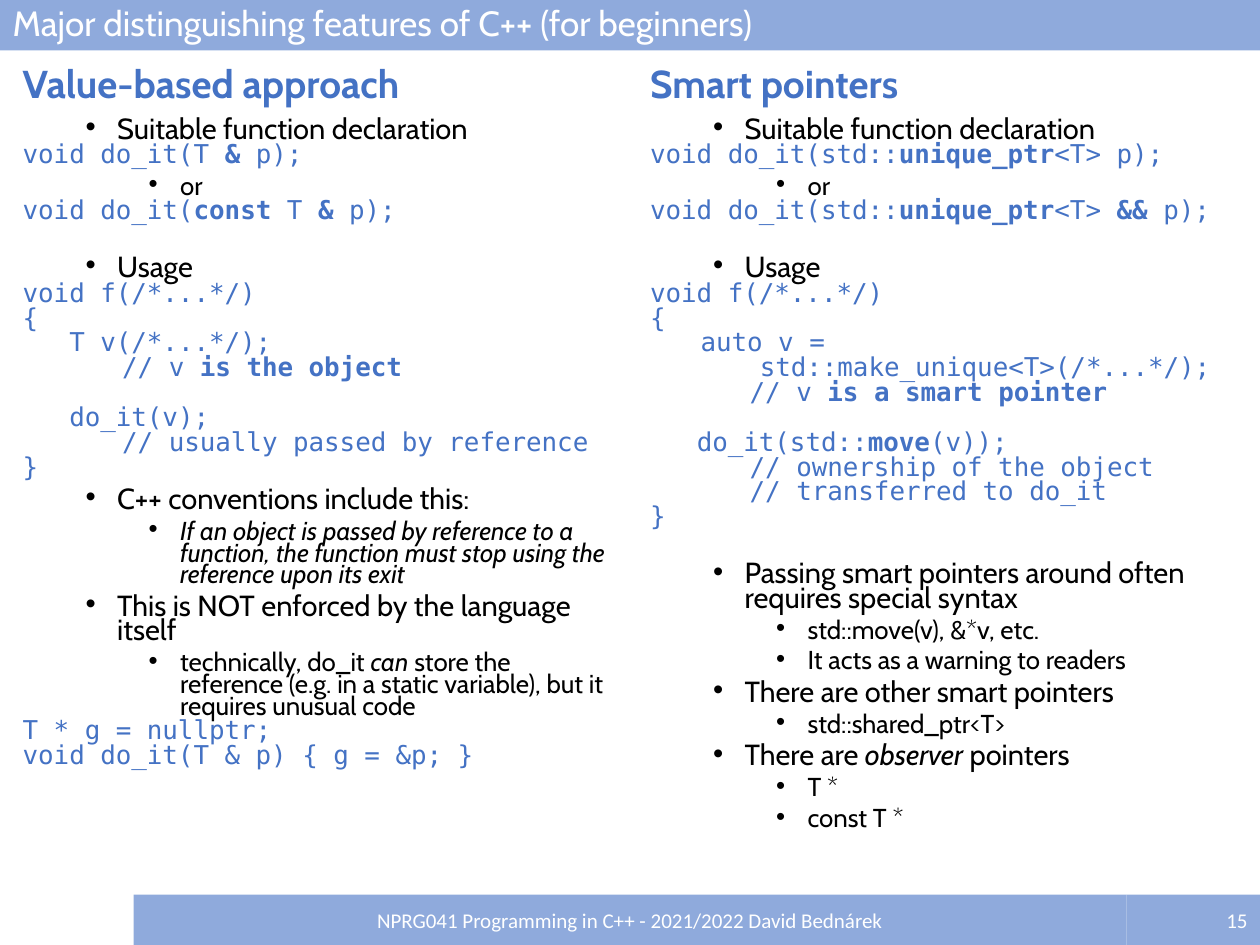
from dataclasses import dataclass

from lxml.etree import SubElement
from pptx import Presentation
from pptx.dml.color import RGBColor
from pptx.enum.shapes import MSO_SHAPE
from pptx.enum.text import MSO_ANCHOR as Anchor, MSO_AUTO_SIZE as AutoSize, PP_ALIGN as Align
from pptx.oxml.ns import qn
from pptx.util import Inches, Pt

COLORS = {"bar": "8FAADC", "accent": "4472C4", "text": "000000", "white": "FFFFFF"}
SANS, MONO, FOOTER = "Cabin", "DejaVu Sans Mono", "Calibri"
BLANK = 14.2  # height of one empty code line, in points


@dataclass
class Style:
    font: str
    size: float
    color: str
    level: int = 0
    indent: float = 0
    spacing: float = 1
    before: float = 0
    bullet: bool = False
    bold: bool = False
    emphasis: str = "bold"


@dataclass
class Line:
    """Pieces of text between bars are emphasised."""
    style: Style
    text: str
    indent: float = 0
    gap: float = 0


@dataclass
class Column:
    left: float
    width: float
    heading: str
    lines: list[Line]


TITLE = Style(SANS, 20, "white", spacing=0.9)
HEADING = Style(SANS, 22.2, "accent", spacing=0.8, before=10, bold=True)
ITEM = Style(SANS, 16.6, "text", 1, 0.75, 0.7, 5, bullet=True, emphasis="italic")
SUBITEM = Style(SANS, 14.8, "text", 2, 1.25, 0.7, 5, bullet=True, emphasis="italic")
CODE = Style(MONO, 14.8, "accent", 4, spacing=0.8)
FOOT = Style(FOOTER, 12, "white")

STEP, COMMENT = 0.37, 0.79  # code indents

VALUES = Column(0.08, 4.84, "Value-based approach", [
    Line(ITEM, "Suitable function declaration"),
    Line(CODE, "void do_it(T |&| p);"),
    Line(SUBITEM, "or"),
    Line(CODE, "void do_it(|const| T |&| p);"),
    Line(ITEM, "Usage", gap=BLANK),
    Line(CODE, "void f(/*...*/)"),
    Line(CODE, "{"),
    Line(CODE, "T v(/*...*/);", STEP),
    Line(CODE, "// v |is the object|", COMMENT),
    Line(CODE, "do_it(v);", STEP, BLANK),
    Line(CODE, "// usually passed by reference", COMMENT),
    Line(CODE, "}"),
    Line(ITEM, "C++ conventions include this:"),
    Line(SUBITEM, "|If an object is passed by reference to a function, "
                  "the function must stop using the reference upon its exit|"),
    Line(ITEM, "This is NOT enforced by the language itself"),
    Line(SUBITEM, "technically, do_it |can| store the reference "
                  "(e.g. in a static variable), but it requires unusual code"),
    Line(CODE, "T * g = nullptr;"),
    Line(CODE, "void do_it(T & p) { g = &p; }"),
])

POINTERS = Column(5.06, 4.86, "Smart pointers", [
    Line(ITEM, "Suitable function declaration"),
    Line(CODE, "void do_it(std::|unique_ptr|<T> p);"),
    Line(SUBITEM, "or"),
    Line(CODE, "void do_it(std::|unique_ptr|<T> |&&| p);"),
    Line(ITEM, "Usage", gap=BLANK),
    Line(CODE, "void f(/*...*/)"),
    Line(CODE, "{"),
    Line(CODE, "auto v =", 0.4),
    Line(CODE, "std::make_unique<T>(/*...*/);", 0.87),
    Line(CODE, "// v |is a smart pointer|", COMMENT),
    Line(CODE, "do_it(std::|move|(v));", STEP, BLANK),
    Line(CODE, "// ownership of the object", COMMENT),
    Line(CODE, "// transferred to do_it", COMMENT),
    Line(CODE, "}"),
    Line(ITEM, "Passing smart pointers around often requires special syntax", gap=BLANK),
    Line(SUBITEM, "std::move(v), &*v, etc."),
    Line(SUBITEM, "It acts as a warning to readers"),
    Line(ITEM, "There are other smart pointers"),
    Line(SUBITEM, "std::shared_ptr<T>"),
    Line(ITEM, "There are |observer| pointers"),
    Line(SUBITEM, "T *"),
    Line(SUBITEM, "const T *"),
])


def rgb(name: str) -> RGBColor:
    return RGBColor.from_string(COLORS[name])


def place(s, left: float, top: float, width: float, height: float) -> None:
    s.left, s.top, s.width, s.height = map(Inches, (left, top, width, height))


def fill_bar(s) -> None:
    s.fill.solid()
    s.fill.fore_color.rgb = rgb("bar")
    s.line.fill.background()


def format_paragraph(p, line: Line, align: Align) -> None:
    style = line.style
    p.level, p.alignment = style.level, align
    p.line_spacing = style.spacing
    p.space_before, p.space_after = Pt(style.before + line.gap), Pt(0)
    pPr = p._p.get_or_add_pPr()
    pPr.set("marL", str(Inches(style.indent + line.indent)))
    pPr.set("indent", str(Inches(-0.25 if style.bullet else 0)))
    if style.bullet:
        SubElement(pPr, qn("a:buFont")).set("typeface", "Arial")
        SubElement(pPr, qn("a:buChar")).set("char", "•")
    else:
        SubElement(pPr, qn("a:buNone"))


def add_runs(p, line: Line) -> None:
    style = line.style
    for i, piece in enumerate(line.text.split("|")):
        if not piece:
            continue
        r = p.add_run()
        r.text = piece
        font = r.font
        font.name, font.size = style.font, Pt(style.size)
        font.color.rgb = rgb(style.color)
        font.bold, font.italic = style.bold, False
        if i % 2:
            setattr(font, style.emphasis, True)


def write(s, lines: list[Line], anchor: Anchor, align: Align = Align.LEFT) -> None:
    tf = s.text_frame
    tf.word_wrap, tf.auto_size = True, AutoSize.NONE
    tf.vertical_anchor = anchor
    for i, line in enumerate(lines):
        p = tf.add_paragraph() if i else tf.paragraphs[0]
        format_paragraph(p, line, align)
        add_runs(p, line)


def add_column(heading, body, column: Column) -> None:
    place(heading, column.left, 0.5, column.width, 0.39)
    write(heading, [Line(HEADING, column.heading)], Anchor.BOTTOM)
    place(body, column.left, 0.9, column.width, 6.1)
    write(body, column.lines, Anchor.TOP)


def add_footer(slide, left: float, width: float, text: str, align: Align) -> None:
    s = slide.shapes.add_shape(MSO_SHAPE.RECTANGLE, 0, 0, 0, 0)
    place(s, left, 7.1, width, 0.4)
    fill_bar(s)
    s.shadow.inherit = False
    write(s, [Line(FOOT, text)], Anchor.MIDDLE, align)


def main() -> None:
    prs = Presentation()
    prs.slide_width, prs.slide_height = Inches(10), Inches(7.5)
    slide = prs.slides.add_slide(prs.slide_layouts.get_by_name("Comparison"))
    title, *bodies = slide.placeholders
    place(title, 0, 0, 10, 0.4)
    fill_bar(title)
    write(title, [Line(TITLE, "Major distinguishing features of C++ (for beginners)")],
          Anchor.MIDDLE)
    for i, column in enumerate((VALUES, POINTERS)):
        add_column(*bodies[2 * i:2 * i + 2], column)
    add_footer(slide, 1.06, 7.88, "NPRG041 Programming in C++ - 2021/2022 David Bednárek",
               Align.CENTER)
    add_footer(slide, 8.94, 1.06, "15", Align.RIGHT)
    prs.save("out.pptx")


if __name__ == "__main__":
    main()
